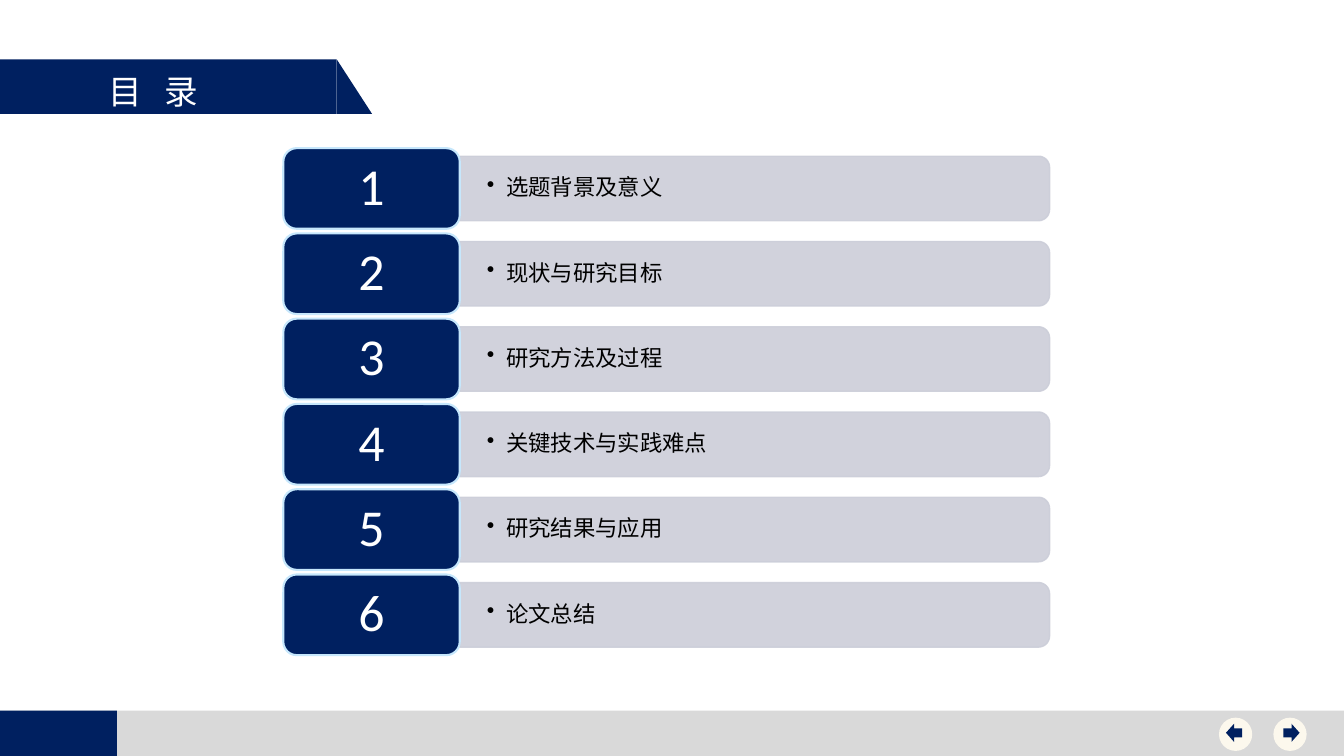
from dataclasses import dataclass
from math import cos, pi, sin
from lxml.etree import SubElement
from pptx import Presentation
from pptx.dml.color import RGBColor
from pptx.enum.shapes import MSO_SHAPE
from pptx.enum.text import MSO_ANCHOR, PP_ALIGN
from pptx.oxml.ns import qn
from pptx.util import Inches, Pt


@dataclass(frozen=True)
class Theme:
    navy: str = "002060"
    gray: str = "D9D9D9"
    cream: str = "FCF8ED"
    bar: str = "CCCED9"
    edge: str = "C6E7FC"
    white: str = "FFFFFF"
    black: str = "000000"
    latin: str = "Calibri"
    han: str = "Noto Sans CJK SC"
    title: int = 24
    digit: int = 37
    item: int = 16


class Deck:
    def __init__(self, theme):
        self.theme = theme
        self.file = Presentation()
        self.file.slide_width = Inches(13.33)
        self.file.slide_height = Inches(7.5)
        self.slide = self.file.slides.add_slide(self.file.slide_layouts[6])

    def paint(self, shape, fill, line=None, width=1, alpha=None):
        shape.shadow.inherit = False
        shape.fill.solid()
        shape.fill.fore_color.rgb = RGBColor.from_string(fill)
        if line:
            shape.line.color.rgb = RGBColor.from_string(line)
            shape.line.width = Pt(width)
        else:
            shape.line.fill.background()
        if alpha:
            for color in shape._element.spPr.iter(qn("a:srgbClr")):
                SubElement(color, qn("a:alpha"), val=str(alpha * 1000))

    def shape(self, kind, x, y, w, h, fill, line=None, width=1):
        shape = self.slide.shapes.add_shape(
            kind, Inches(x), Inches(y), Inches(w), Inches(h))
        self.paint(shape, fill, line, width)
        return shape

    def frame(self, shape, left, top, right, bottom):
        frame = shape.text_frame
        frame.word_wrap = True
        frame.vertical_anchor = MSO_ANCHOR.MIDDLE
        frame.margin_left, frame.margin_right = Inches(left), Inches(right)
        frame.margin_top, frame.margin_bottom = Inches(top), Inches(bottom)
        para = frame.paragraphs[0]
        para.line_spacing = 0.9
        return para

    def run(self, para, text, size, color, font):
        run = para.add_run()
        run.text = text
        run.font.size = Pt(size)
        run.font.name = font
        run.font.color.rgb = RGBColor.from_string(color)
        SubElement(run.font._element, qn("a:ea"), typeface=self.theme.han)
        return run

    def title(self, first, last, x, y, w, h):
        box = self.slide.shapes.add_textbox(
            Inches(x), Inches(y), Inches(w), Inches(h))
        box.text_frame.word_wrap = True
        para = box.text_frame.paragraphs[0]
        t = self.theme
        # The space between the two characters is widened by tracking
        for text, track in ((first, 0), (" ", 10.8), (last, 0)):
            run = self.run(para, text, t.title, t.white, t.han)
            if track:
                run.font._element.set("spc", str(int(track * 100)))

    def bar(self, text, x, y, w, h, r):
        # Square on the left, rounded on the right
        right, low = x + w, y + h
        steps = [i * pi / 24 for i in range(13)]
        upper = [(right - r + r * sin(a), y + r - r * cos(a)) for a in steps]
        lower = [(right - r + r * cos(a), low - r + r * sin(a)) for a in steps]
        dots = [(Inches(a), Inches(b)) for a, b in upper + lower + [(x, low)]]
        path = self.slide.shapes.build_freeform(Inches(x), Inches(y))
        path.add_line_segments(dots, close=True)
        shape = path.convert_to_shape()
        t = self.theme
        self.paint(shape, t.bar, t.bar, 1, alpha=90)
        para = self.frame(shape, 0.27, 0.17, 0.3, 0.17)
        para.alignment = PP_ALIGN.LEFT
        para.level = 1
        props = para._p.get_or_add_pPr()
        props.set("marL", str(Inches(0.19)))
        props.set("indent", str(Inches(-0.19)))
        SubElement(props, qn("a:buChar"), char="•")
        self.run(para, text, t.item, t.black, t.latin)

    def badge(self, text, x, y, w, h):
        t = self.theme
        shape = self.shape(MSO_SHAPE.ROUNDED_RECTANGLE, x, y, w, h,
                           t.navy, t.edge, 1.5)
        para = self.frame(shape, 0.19, 0.12, 0.19, 0.12)
        para.alignment = PP_ALIGN.CENTER
        self.run(para, text, t.digit, t.white, t.latin)

    def button(self, arrow, x, shift):
        t = self.theme
        self.shape(MSO_SHAPE.OVAL, x, 7.12, 0.33, 0.33, t.cream)
        self.shape(arrow, x + shift, 7.18, 0.16, 0.18, t.navy)


def main():
    theme = Theme()
    deck = Deck(theme)

    # Footer
    deck.shape(MSO_SHAPE.RECTANGLE, 0, 7.05, 13.33, 0.45, theme.gray)
    deck.shape(MSO_SHAPE.RECTANGLE, 0, 7.05, 1.16, 0.45, theme.navy)

    # Title ribbon
    deck.shape(MSO_SHAPE.RECTANGLE, 0, 0.59, 3.34, 0.54, theme.navy)
    deck.shape(MSO_SHAPE.RIGHT_TRIANGLE, 3.34, 0.59, 0.35, 0.54, theme.navy)
    deck.title("目", "录", 0.98, 0.65, 1.63, 0.5)

    # Page buttons
    deck.button(MSO_SHAPE.RIGHT_ARROW, 12.63, 0.1)
    deck.button(MSO_SHAPE.LEFT_ARROW, 12.09, 0.07)

    # Contents list
    items = ["选题背景及意义", "现状与研究目标", "研究方法及过程",
             "关键技术与实践难点", "研究结果与应用", "论文总结"]
    for i, item in enumerate(items):
        top = 1.47 + i * 0.846
        deck.bar(item, 4.56, top + 0.08, 5.85, 0.64, 0.11)
        deck.badge(str(i + 1), 2.81, top, 1.75, 0.8)

    deck.file.save("out.pptx")


if __name__ == "__main__":
    main()
